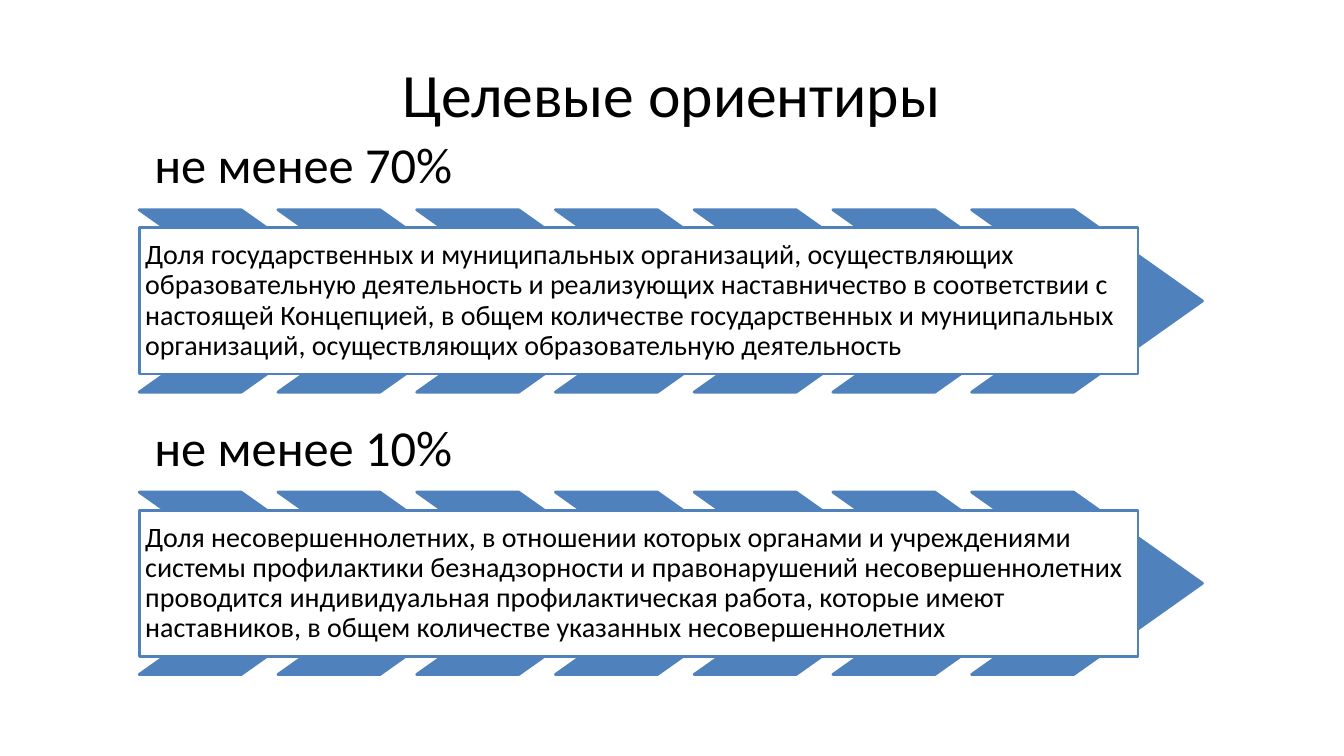
from dataclasses import dataclass

from pptx import Presentation
from pptx.dml.color import RGBColor
from pptx.enum.shapes import MSO_SHAPE
from pptx.enum.text import MSO_ANCHOR, PP_ALIGN
from pptx.shapes.autoshape import Shape
from pptx.slide import Slide
from pptx.util import Pt

BLUE = RGBColor(0x4F, 0x81, 0xBD)
WHITE = RGBColor(0xFF, 0xFF, 0xFF)
BLACK = RGBColor(0x00, 0x00, 0x00)
FONT = "Calibri"

LEFT = 99.4
CHEVRON_COUNT = 7
CHEVRON_PITCH = 99.1
CHEVRON_WIDTH, CHEVRON_HEIGHT = 164.9, 130.3
CHEVRON_POINT = 0.706
LABEL_WIDTH, LABEL_HEIGHT = 704.9, 64.1
BOX_WIDTH, BOX_HEIGHT = 713.5, 104.4


@dataclass(frozen=True)
class Target:
    top: float
    share: str
    description: str


TARGETS = [
    Target(
        85.7,
        "не менее 70%",
        "Доля государственных и муниципальных организаций, осуществляющих "
        "образовательную деятельность и реализующих наставничество в соответствии с "
        "настоящей Концепцией, в общем количестве государственных и муниципальных "
        "организаций, осуществляющих образовательную деятельность",
    ),
    Target(
        287.4,
        "не менее 10%",
        "Доля несовершеннолетних, в отношении которых органами и учреждениями "
        "системы профилактики безнадзорности и правонарушений несовершеннолетних "
        "проводится индивидуальная профилактическая работа, которые имеют "
        "наставников, в общем количестве указанных несовершеннолетних",
    ),
]


def write_text(sp: Shape, text: str, *, size: float, inset: float,
               anchor: MSO_ANCHOR = MSO_ANCHOR.MIDDLE,
               align: PP_ALIGN = PP_ALIGN.LEFT, spacing: float = 0.9) -> None:
    tf = sp.text_frame
    tf.word_wrap = True
    tf.vertical_anchor = anchor
    tf.margin_left = tf.margin_right = Pt(inset)
    tf.margin_top = tf.margin_bottom = Pt(inset)
    p = tf.paragraphs[0]
    p.alignment = align
    p.line_spacing = spacing
    r = p.add_run()
    r.text = text
    r.font.name = FONT
    r.font.size = Pt(size)
    r.font.color.rgb = BLACK


def add_outlined(s: Slide, kind: MSO_SHAPE, left: float, top: float,
                 width: float, height: float, fill: RGBColor) -> Shape:
    sp = s.shapes.add_shape(kind, Pt(left), Pt(top), Pt(width), Pt(height))
    sp.shadow.inherit = False
    sp.fill.solid()
    sp.fill.fore_color.rgb = fill
    sp.line.color.rgb = BLUE
    sp.line.width = Pt(2)
    return sp


def add_target(s: Slide, target: Target) -> None:
    label = s.shapes.add_textbox(Pt(LEFT), Pt(target.top), Pt(LABEL_WIDTH), Pt(LABEL_HEIGHT))
    write_text(label, target.share, size=36, inset=10.8, anchor=MSO_ANCHOR.BOTTOM)

    band_top = target.top + LABEL_HEIGHT
    for i in range(CHEVRON_COUNT):
        chevron = add_outlined(s, MSO_SHAPE.CHEVRON, LEFT + i * CHEVRON_PITCH, band_top,
                               CHEVRON_WIDTH, CHEVRON_HEIGHT, BLUE)
        chevron.adjustments[0] = CHEVRON_POINT

    box_top = band_top + (CHEVRON_HEIGHT - BOX_HEIGHT) / 2
    box = add_outlined(s, MSO_SHAPE.RECTANGLE, LEFT, box_top, BOX_WIDTH, BOX_HEIGHT, WHITE)
    write_text(box, target.description, size=20, inset=4.3)


def main() -> None:
    prs = Presentation()
    prs.slide_width, prs.slide_height = Pt(960), Pt(540)
    s = prs.slides.add_slide(prs.slide_layouts[6])
    title = s.shapes.add_textbox(Pt(48), Pt(21.6), Pt(864), Pt(90))
    write_text(title, "Целевые ориентиры", size=44, inset=3.6,
               align=PP_ALIGN.CENTER, spacing=1.0)
    for target in TARGETS:
        add_target(s, target)
    prs.save("out.pptx")


if __name__ == "__main__":
    main()
